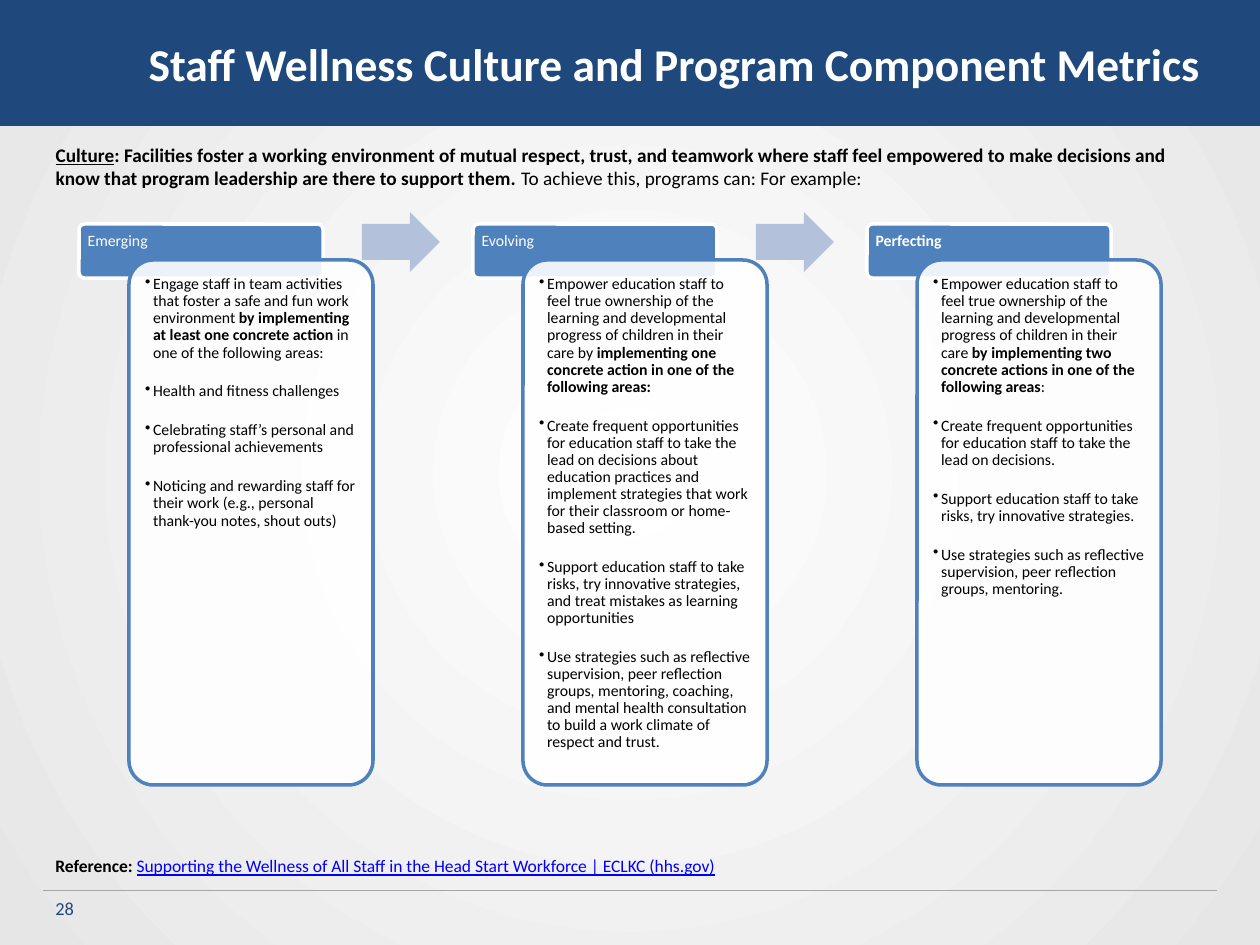
from dataclasses import dataclass

from lxml import etree
from pptx import Presentation, util as u
from pptx.dml.color import RGBColor
from pptx.enum import shapes, text
from pptx.oxml.ns import qn

TITLE = "Staff Wellness Culture and Program Component Metrics"
# Each run is (text, style); the style letters are b for bold, u for underlined.
INTRO = [
    ("Culture", "bu"),
    (": Facilities foster a working environment of mutual respect, trust, and teamwork "
     "where staff feel empowered to make decisions and know that program leadership "
     "are there to support them. ", "b"),
    ("To achieve this, programs can: For example:", ""),
]
STAGES = [
    ([("Emerging", "")], [
        [("Engage staff in team activities that foster a safe and fun work environment ", ""),
         ("by implementing at least one concrete action", "b"),
         (" in one of the following areas:", "")],
        [("Health and fitness challenges", "")],
        [("Celebrating staff’s personal and professional achievements", "")],
        [("Noticing and rewarding staff for their work (e.g., personal thank-you notes, "
          "shout outs)", "")],
    ]),
    ([("Evolving", "")], [
        [("Empower education staff to feel true ownership of the learning and developmental "
          "progress of children in their care by ", ""),
         ("implementing one concrete action in one of the following areas:", "b")],
        [("Create frequent opportunities for education staff to take the lead on decisions "
          "about education practices and implement strategies that work for their classroom "
          "or home-based setting.", "")],
        [("Support education staff to take risks, try innovative strategies, and treat "
          "mistakes as learning opportunities", "")],
        [("Use strategies such as reflective supervision, peer reflection groups, mentoring, "
          "coaching, and mental health consultation to build a work climate of respect "
          "and trust.", "")],
    ]),
    ([("Perfecting", "b")], [
        [("Empower education staff to feel true ownership of the learning and developmental "
          "progress of children in their care ", ""),
         ("by implementing two concrete actions in one of the following areas", "b"),
         (":", "")],
        [("Create frequent opportunities for education staff to take the lead on "
          "decisions.", "")],
        [("Support education staff to take risks, try innovative strategies.", "")],
        [("Use strategies such as reflective supervision, peer reflection groups, "
          "mentoring.", "")],
    ]),
]
REFERENCE = [
    ("Reference: ", "b"),
    ("Supporting the Wellness of All Staff in the Head Start Workforce | ECLKC (hhs.gov)", "u"),
]
PAGE_NUMBER = "28"


@dataclass(frozen=True)
class Theme:
    font: str = "Calibri"
    navy: str = "1F497D"
    blue: str = "4F81BD"
    arrow: str = "B3C1DB"
    rule: str = "A6A6A6"
    link: str = "0000FF"
    white: str = "FFFFFF"
    edge: str = "E6E6E6"
    black: str = "000000"
    title_size: float = 26
    intro_size: float = 11
    number_size: float = 10.5
    reference_size: float = 10
    card_size: float = 9


THEME = Theme()
FIRST_STAGE, STAGE_STEP, STAGE_WIDTH = 79, 394, 244


def px(count):
    return u.Emu(round(count * 914400 / 126))


def rgb(colour):
    return RGBColor.from_string(colour)


def place(shape, left, top, width, height):
    shape.left, shape.top, shape.width, shape.height = map(px, (left, top, width, height))


def write(para, runs, size, colour):
    para.alignment = text.PP_ALIGN.LEFT
    font = para.font
    font.name, font.size, font.color.rgb = THEME.font, u.Pt(size), rgb(colour)
    for words, style in runs:
        span = para.add_run()
        span.text = words
        span.font.bold = "b" in style
        span.font.underline = "u" in style


def set_bullet(para, character=None, indent=0):
    props = para._p.get_or_add_pPr()
    props.set("marL", str(px(indent)))
    props.set("indent", str(-px(indent)))
    bullet = etree.SubElement(props, qn("a:buChar" if character else "a:buNone"))
    if character:
        bullet.set("char", character)


def set_frame(shape, inset=None, anchor=text.MSO_ANCHOR.TOP):
    frame = shape.text_frame
    frame.word_wrap = True
    frame.auto_size = text.MSO_AUTO_SIZE.NONE
    frame.vertical_anchor = anchor
    if inset is not None:
        frame.margin_left = frame.margin_right = px(inset)
        frame.margin_top = frame.margin_bottom = px(inset)
    return frame


def add_box(page, kind, bounds, fill, line=None):
    box = page.shapes.add_shape(kind, *map(px, bounds))
    box.shadow.inherit = False
    box.fill.solid()
    box.fill.fore_color.rgb = rgb(fill)
    if line:
        box.line.color.rgb = rgb(line)
        box.line.width = u.Pt(2)
    else:
        box.line.fill.background()
    return box


def add_label(page, bounds, runs, size, colour):
    label = page.shapes.add_textbox(*map(px, bounds))
    para = set_frame(label).paragraphs[0]
    write(para, runs, size, colour)
    return para


def paint_background(page):
    fill = page.background.fill
    fill.gradient()
    for stop, colour, position in zip(fill.gradient_stops, (THEME.white, THEME.edge), (0, 1)):
        stop.color.rgb = rgb(colour)
        stop.position = position
    linear = next(page._element.iter(qn("a:lin")))
    radial = etree.Element(qn("a:path"), {"path": "circle"})
    etree.SubElement(radial, qn("a:fillToRect"), dict.fromkeys("ltrb", "50000"))
    linear.getparent().replace(linear, radial)


def add_stage(page, left, heading, points):
    rounded = shapes.MSO_SHAPE.ROUNDED_RECTANGLE
    header = add_box(page, rounded, (left, 224, STAGE_WIDTH, 54), THEME.blue, THEME.white)
    header.adjustments[0] = 0.1
    para = set_frame(header, 7).paragraphs[0]
    para.line_spacing = 0.9
    write(para, heading, THEME.card_size, THEME.white)

    card = add_box(page, rounded, (left + 50, 260, STAGE_WIDTH, 525), THEME.white, THEME.blue)
    card.adjustments[0] = 0.1
    tint = next(card._element.spPr.iter(qn("a:srgbClr")))
    etree.SubElement(tint, qn("a:alpha"), val="90000")
    frame = set_frame(card, 9)
    for index, runs in enumerate(points):
        para = frame.add_paragraph() if index else frame.paragraphs[0]
        para.line_spacing = 0.9
        para.space_after = u.Pt(12.5)
        set_bullet(para, "•", 8)
        write(para, runs, THEME.card_size, THEME.black)


def main():
    deck = Presentation()
    deck.slide_width, deck.slide_height = px(1260), px(945)
    page = deck.slides.add_slide(deck.slide_layouts[1])
    paint_background(page)

    rule = page.shapes.add_connector(shapes.MSO_CONNECTOR.STRAIGHT,
                                     *map(px, (43, 890, 1217, 890)))
    rule.line.color.rgb = rgb(THEME.rule)
    rule.line.width = u.Pt(0.25)
    etree.SubElement(rule._element.spPr, qn("a:effectLst"))
    add_box(page, shapes.MSO_SHAPE.RECTANGLE, (0, -1, 1260, 127), THEME.navy)
    add_label(page, (43, 891, 294, 50), [(PAGE_NUMBER, "")], THEME.number_size, THEME.navy)

    title, body = page.shapes.title, page.placeholders[1]
    for holder in (body, title):
        page.shapes._spTree.append(holder._element)  # bring in front of the band
    place(body, 43, 137, 1174, 692)
    para = set_frame(body).paragraphs[0]
    para.space_before = u.Pt(0)
    set_bullet(para)
    write(para, INTRO, THEME.intro_size, THEME.black)
    place(title, 136, 29, 1090, 68)
    para = set_frame(title, anchor=text.MSO_ANCHOR.MIDDLE).paragraphs[0]
    write(para, [(TITLE, "b")], THEME.title_size, THEME.white)

    for index, (heading, points) in enumerate(STAGES):
        left = FIRST_STAGE + index * STAGE_STEP
        add_stage(page, left, heading, points)
        if index < len(STAGES) - 1:
            arrow = add_box(page, shapes.MSO_SHAPE.RIGHT_ARROW, (left + 283, 212, 78, 60),
                            THEME.arrow)
            arrow.adjustments[0], arrow.adjustments[1] = 0.6, 0.5

    para = add_label(page, (43, 849, 925, 34), REFERENCE, THEME.reference_size, THEME.black)
    para.runs[1].font.color.rgb = rgb(THEME.link)
    deck.save("out.pptx")


if __name__ == "__main__":
    main()
